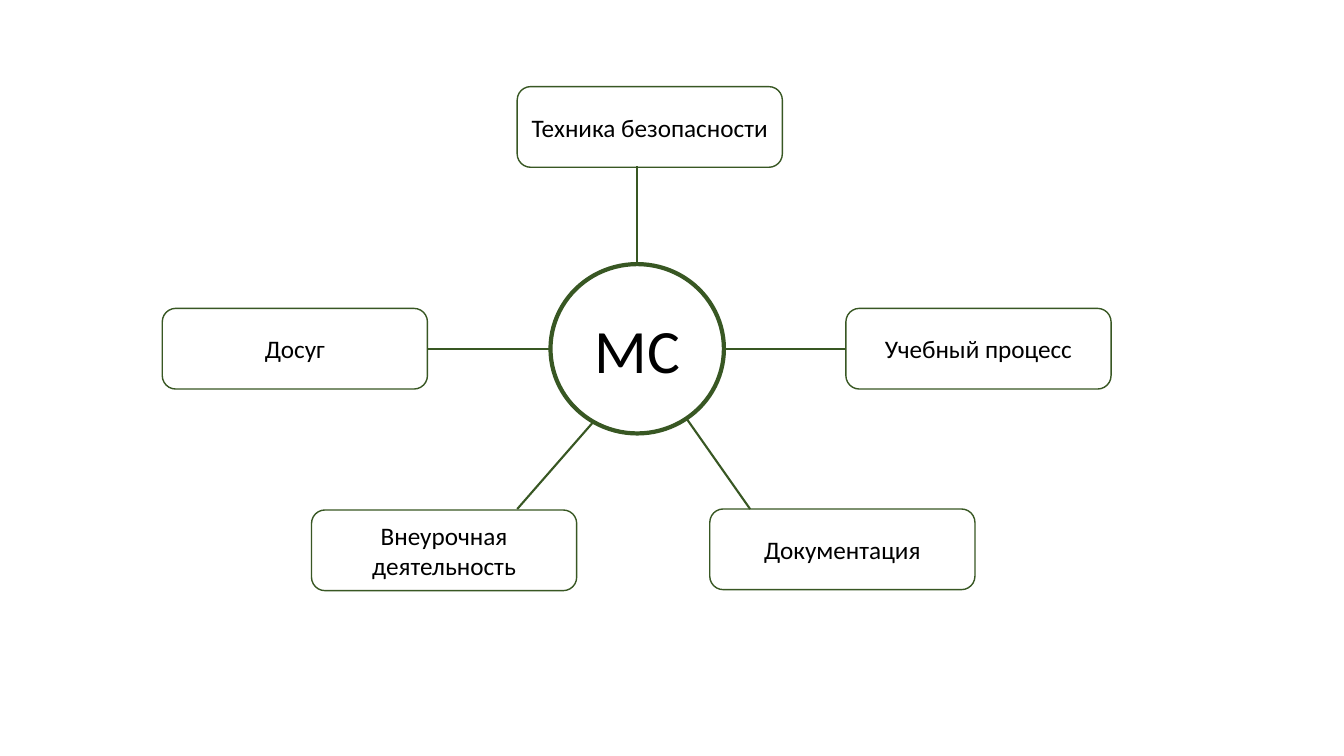
from lxml.etree import SubElement
from pptx import Presentation
from pptx.dml.color import RGBColor
from pptx.enum.shapes import MSO_CONNECTOR, MSO_SHAPE
from pptx.enum.text import MSO_ANCHOR, PP_ALIGN
from pptx.oxml.ns import qn
from pptx.util import Inches, Pt

COLORS = {"outline": "385723", "text": "000000"}
FONT = "Calibri"
TOPIC_WIDTH, TOPIC_HEIGHT = 2.63, 0.8
HUB_BOX = (5.46, 2.62, 1.72, 1.68)

# Topic, left, top, spoke start, spoke end, side joined at its middle
TOPICS = [
    ("Техника безопасности", 5.13, 0.86, (6.32, 2.62), (6.32, 1.65), None),
    ("Учебный процесс", 8.39, 3.06, (7.18, 3.46), (8.39, 3.46), 1),
    ("Документация", 7.04, 5.05, (6.8, 4.14), (7.44, 5.05), None),
    ("Внеурочная деятельность", 3.09, 5.06, (5.89, 4.18), (5.13, 5.05), None),
    ("Досуг", 1.61, 3.06, (5.46, 3.46), (4.24, 3.46), 3),
]


def color(name):
    return RGBColor.from_string(COLORS[name])


def add_node(slide, geometry, box, label, size, line_width):
    """Outlined shape with a centred label."""
    node = slide.shapes.add_shape(geometry, *(Inches(v) for v in box))
    node.shadow.inherit = False
    node.fill.background()
    node.line.color.rgb = color("outline")
    node.line.width = Pt(line_width)
    frame = node.text_frame
    frame.word_wrap = True
    frame.vertical_anchor = MSO_ANCHOR.MIDDLE
    frame.margin_left = frame.margin_right = Inches(0.05)
    paragraph = frame.paragraphs[0]
    paragraph.alignment = PP_ALIGN.CENTER
    run = paragraph.add_run()
    run.text = label
    run.font.name = FONT
    run.font.size = Pt(size)
    run.font.color.rgb = color("text")
    return node


def add_spoke(slide, start, end, topic, side):
    """Line from the hub to a topic, joined where it meets a side's middle."""
    spoke = slide.shapes.add_connector(
        MSO_CONNECTOR.STRAIGHT, *(Inches(v) for v in start + end))
    spoke.line.color.rgb = color("outline")
    spoke.line.width = Pt(1.5)
    SubElement(spoke._element.spPr, qn("a:effectLst"))
    if side is not None:
        spoke.end_connect(topic, side)


def add_mind_map(slide):
    # Central hub
    add_node(slide, MSO_SHAPE.OVAL, HUB_BOX, "МС", 44, 3)
    # Topics around it
    for label, left, top, start, end, side in TOPICS:
        box = (left, top, TOPIC_WIDTH, TOPIC_HEIGHT)
        topic = add_node(slide, MSO_SHAPE.ROUNDED_RECTANGLE, box, label, 18, 1)
        add_spoke(slide, start, end, topic, side)


def main():
    presentation = Presentation()
    presentation.slide_width = Inches(13.33)
    presentation.slide_height = Inches(7.5)
    add_mind_map(presentation.slides.add_slide(presentation.slide_layouts[6]))
    presentation.save("out.pptx")


if __name__ == "__main__":
    main()
